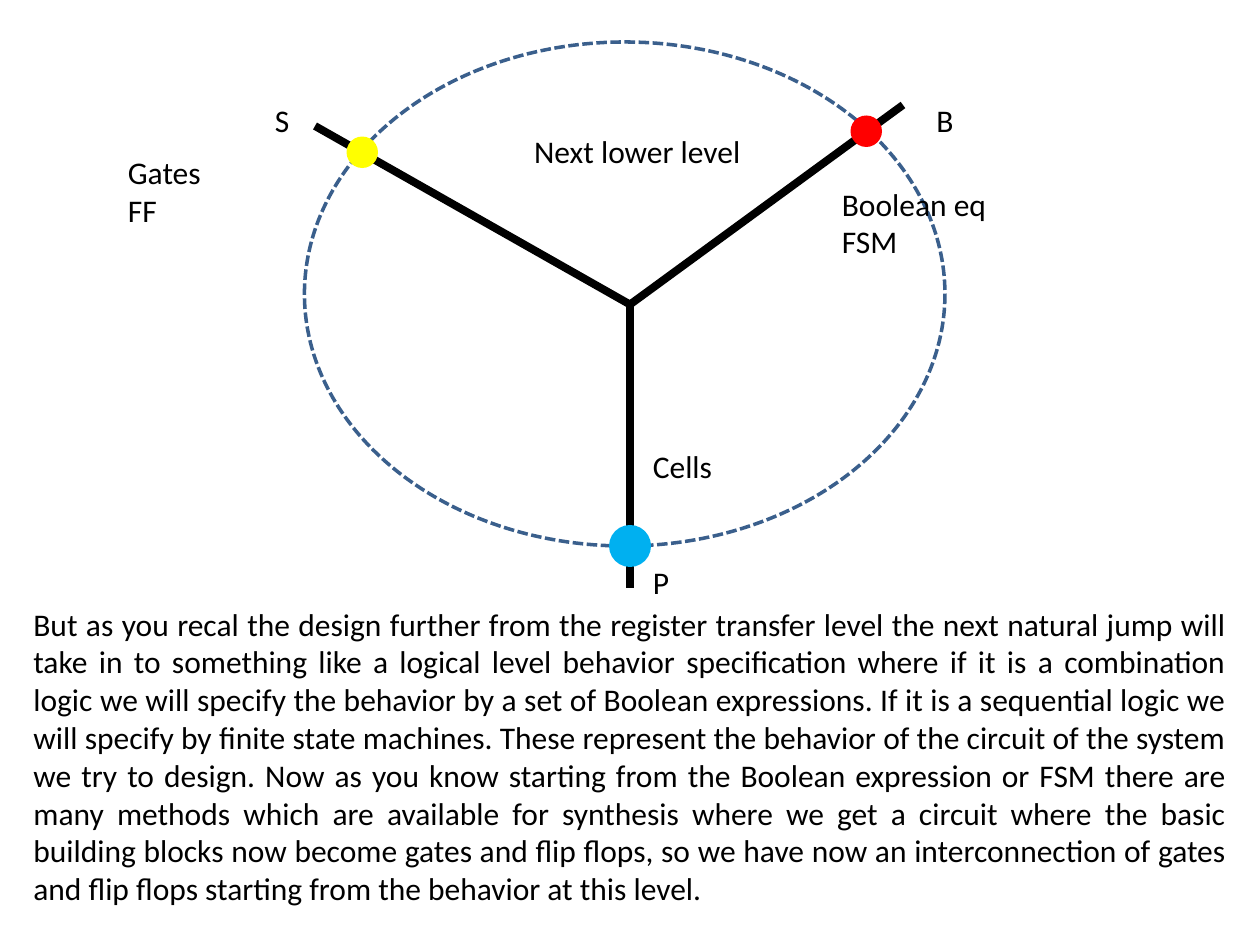
"""Build a slide of a three-axis design chart with a text below it."""
from dataclasses import dataclass

from lxml import etree
from pptx import Presentation
from pptx.dml.color import RGBColor
from pptx.enum.dml import MSO_LINE
from pptx.enum.shapes import MSO_CONNECTOR, MSO_SHAPE
from pptx.enum.text import MSO_AUTO_SIZE, PP_ALIGN
from pptx.oxml.ns import qn
from pptx.shapes.group import GroupShape
from pptx.slide import Slide
from pptx.util import Emu, Pt

STRAIGHT = MSO_CONNECTOR.STRAIGHT
OVAL = MSO_SHAPE.OVAL
DASH = MSO_LINE.SQUARE_DOT
GROW = MSO_AUTO_SIZE.SHAPE_TO_FIT_TEXT
LEFT, JUSTIFY = PP_ALIGN.LEFT, PP_ALIGN.JUSTIFY

SCALE = 7620
FONT = "Calibri"
BLACK = "000000"
HUB = (600, 290)
TIPS = [(300, 120), (860, 100), (600, 560)]
BODY = (
    "But as you recal the design further from the register transfer level "
    "the next natural jump will take in to something like a logical level "
    "behavior specification where if it is a combination logic we will "
    "specify the behavior by a set of Boolean expressions. If it is a "
    "sequential logic we will specify by finite state machines. These "
    "represent the behavior of the circuit of the system we try to design. "
    "Now as you know starting from the Boolean expression or FSM there are "
    "many methods which are available for synthesis where we get a circuit "
    "where the basic building blocks now become gates and flip flops, so we "
    "have now an interconnection of gates and flip flops starting from the "
    "behavior at this level."
)


@dataclass
class Dot:
    """A filled circle on an axis."""
    left: int
    top: int
    size: int
    color: str


@dataclass
class Label:
    """A text box with one paragraph per line."""
    left: int
    top: int
    width: int
    height: int
    lines: list[str]
    wrap: bool = False
    align: PP_ALIGN = LEFT


DOTS = [
    Dot(810, 110, 30, "FF0000"),
    Dot(330, 130, 30, "FFFF00"),
    Dot(580, 500, 40, "00B0F0"),
]
LABELS = [
    Label(880, 90, 41, 48, ["B"]),
    Label(250, 90, 38, 48, ["S"]),
    Label(610, 530, 41, 48, ["P"]),
    Label(790, 170, 163, 85, ["Boolean eq", "FSM"]),
    Label(110, 140, 95, 85, ["Gates", "FF"]),
    Label(610, 420, 82, 48, ["Cells"]),
    Label(497, 120, 223, 48, ["Next lower level"]),
    Label(20, 570, 1160, 302, [BODY], True, JUSTIFY),
]


def px(*sizes: int) -> list[Emu]:
    """Turn px lengths into EMU."""
    return [Emu(size * SCALE) for size in sizes]


def rgb(color: str) -> RGBColor:
    """Turn a hex string into a colour."""
    return RGBColor.from_string(color)


def draw_axis(group: GroupShape, tip: tuple[int, int]) -> None:
    """Draw a thick line from the hub to a tip."""
    axis = group.shapes.add_connector(STRAIGHT, *px(*HUB, *tip))
    axis.line.color.rgb = rgb(BLACK)
    axis.line.width = Pt(4.5)
    etree.SubElement(axis.element.spPr, qn("a:effectLst"))


def draw_ring(slide: Slide) -> None:
    """Draw the dashed ellipse that crosses the axes."""
    ring = slide.shapes.add_shape(OVAL, *px(290, 40, 610, 480))
    ring.shadow.inherit = False
    ring.fill.background()
    ring.line.color.rgb = rgb("3A5F8C")
    ring.line.width = Pt(2)
    ring.line.dash_style = DASH


def draw_dot(slide: Slide, dot: Dot) -> None:
    """Draw a dot without an outline."""
    shape = slide.shapes.add_shape(
        OVAL, *px(dot.left, dot.top, dot.size, dot.size))
    shape.shadow.inherit = False
    shape.fill.solid()
    shape.fill.fore_color.rgb = rgb(dot.color)
    shape.line.fill.background()


def draw_label(slide: Slide, label: Label) -> None:
    """Draw a text box that grows with its text."""
    box = slide.shapes.add_textbox(
        *px(label.left, label.top, label.width, label.height))
    frame = box.text_frame
    frame.word_wrap = label.wrap
    frame.auto_size = GROW
    for index, line in enumerate(label.lines):
        para = frame.add_paragraph() if index else frame.paragraphs[0]
        para.alignment = label.align
        run = para.add_run()
        run.text = line
        run.font.name = FONT
        run.font.size = Pt(18)
        run.font.color.rgb = rgb(BLACK)


def main() -> None:
    """Build and save the slide."""
    deck = Presentation()
    deck.slide_width, deck.slide_height = px(1200, 900)
    slide = deck.slides.add_slide(deck.slide_layouts[6])
    group = slide.shapes.add_group_shape()
    for tip in TIPS:
        draw_axis(group, tip)
    draw_ring(slide)
    for dot in DOTS:
        draw_dot(slide, dot)
    for label in LABELS:
        draw_label(slide, label)
    deck.save("out.pptx")


if __name__ == "__main__":
    main()
